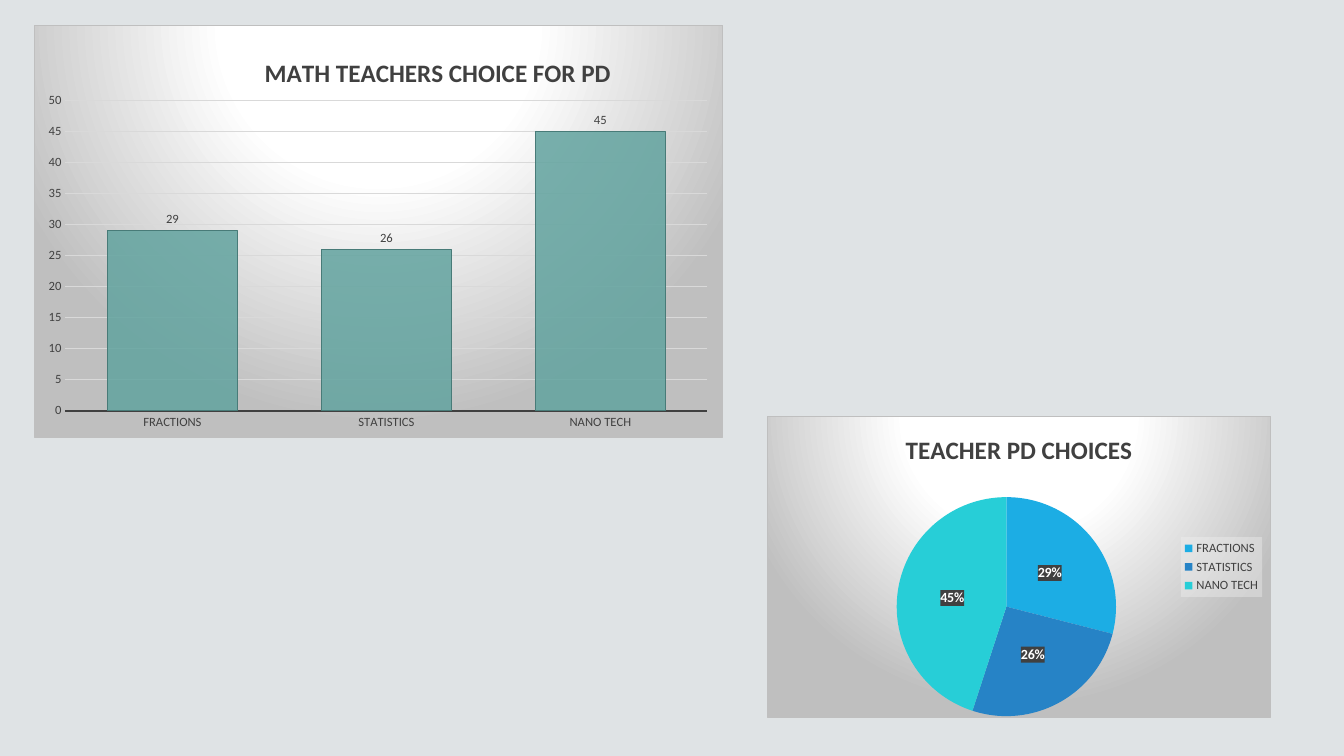
from lxml import etree
from pptx import Presentation
from pptx import util as u
from pptx.chart import data as chart_data
from pptx.dml import color
from pptx.enum import chart as kinds
from pptx.oxml import ns, parse_xml

CHOICES = ["FRACTIONS", "STATISTICS", "NANO TECH"]
VOTES = [29, 26, 45]
FONT = "Calibri"
COLORS = {
    "page": "DFE3E5", "ink": "404040", "white": "FFFFFF", "grid": "D9D9D9",
    "edge": "BFBFBF", "bar": "62A39F", "bar_edge": "487B78", "legend": "F2F2F2",
}
SLICES = ["1CADE4", "2683C6", "27CED7"]
COLUMNS = {
    "title": "MATH TEACHERS CHOICE FOR PD",
    "kind": kinds.XL_CHART_TYPE.COLUMN_CLUSTERED,
    "box": (34, 25, 689, 413),
    "plot": (31, 75, 643, 311),
    "title_at": (226, 25),
}
PIE = {
    "title": "TEACHER PD CHOICES",
    "kind": kinds.XL_CHART_TYPE.PIE,
    "box": (767, 416, 504, 302),
    "plot": (57, 81, 365, 220),
    "title_at": None,
}
PX = 914400 / 100.8


def px(length):
    return u.Emu(round(length * PX))


def rgb(name):
    return color.RGBColor.from_string(COLORS.get(name, name))


def set_font(font, size, name="ink", bold=False):
    font.name, font.size, font.bold = FONT, u.Pt(size), bold
    font.color.rgb = rgb(name)


def set_line(line, name, width):
    line.color.rgb = rgb(name)
    line.width = u.Pt(width)


def shape_props(fill, line=""):
    return parse_xml(f'<c:spPr {ns.nsdecls("c", "a")}>{fill}{line}</c:spPr>')


def see_through(name, percent):
    return (f'<a:solidFill><a:srgbClr val="{COLORS[name]}">'
            f'<a:alpha val="{percent * 1000}"/></a:srgbClr></a:solidFill>')


def set_layout(parent, box, values, inner=False):
    for old in parent.findall(ns.qn("c:layout")):
        parent.remove(old)
    layout = etree.Element(ns.qn("c:layout"))
    manual = etree.SubElement(layout, ns.qn("c:manualLayout"))
    parts = [("layoutTarget", "inner")] if inner else []
    parts += [("xMode", "edge"), ("yMode", "edge")]
    sizes = (box[2], box[3]) * 2
    parts += [(key, f"{value / size:.3f}")
              for key, value, size in zip("xywh", values, sizes)]
    for key, value in parts:
        etree.SubElement(manual, ns.qn("c:" + key)).set("val", value)
    parent.insert(0 if inner else 1, layout)


def style_frame(chart):
    space = chart._chartSpace
    for old in space.findall(ns.qn("c:roundedCorners")):
        space.remove(old)
    corners = etree.Element(ns.qn("c:roundedCorners"))
    corners.set("val", "0")
    date = space.find(ns.qn("c:date1904"))
    space.insert(0 if date is None else space.index(date) + 1, corners)
    stops = "".join(
        f'<a:gs pos="{at * 1000}"><a:srgbClr val="{COLORS[name]}"/></a:gs>'
        for at, name in [(0, "white"), (39, "white"), (100, "edge")])
    fill = (f'<a:gradFill><a:gsLst>{stops}</a:gsLst><a:path path="circle">'
            '<a:fillToRect l="50000" t="-80000" r="50000" b="180000"/>'
            '</a:path></a:gradFill>')
    line = ('<a:ln w="9525"><a:solidFill>'
            f'<a:srgbClr val="{COLORS["edge"]}"/></a:solidFill></a:ln>')
    space.find(ns.qn("c:chart")).addnext(shape_props(fill, line))


def add_vote_chart(page, content):
    votes = chart_data.CategoryChartData()
    votes.categories = CHOICES
    votes.add_series("Series 1", VOTES)
    box = content["box"]
    chart = page.shapes.add_chart(content["kind"], *map(px, box), votes).chart
    set_font(chart.font, 10)
    style_frame(chart)
    chart.has_title = True
    title = chart.chart_title
    span = title.text_frame.paragraphs[0].add_run()
    span.text = content["title"]
    set_font(span.font, 18, bold=True)
    if content["title_at"]:
        set_layout(title._element, box, content["title_at"])
    plot_area = chart._chartSpace.find(".//" + ns.qn("c:plotArea"))
    set_layout(plot_area, box, content["plot"], inner=True)
    chart.plots[0].has_data_labels = True
    return chart


def style_columns(chart):
    chart.has_legend = False
    plot = chart.plots[0]
    plot.gap_width = 65
    plot.vary_by_categories = False
    bars = plot.series[0]
    bars.format.fill.solid()
    bars.format.fill.fore_color.rgb = rgb("bar")
    tint = bars._element.find(".//" + ns.qn("a:srgbClr"))
    etree.SubElement(tint, ns.qn("a:alpha")).set("val", "85000")
    set_line(bars.format.line, "bar_edge", 0.75)
    labels = plot.data_labels
    labels.show_value = True
    labels.position = kinds.XL_LABEL_POSITION.OUTSIDE_END
    set_font(labels.font, 9)
    for axis in (chart.category_axis, chart.value_axis):
        axis.major_tick_mark = axis.minor_tick_mark = kinds.XL_TICK_MARK.NONE
        set_font(axis.tick_labels.font, 9)
    set_line(chart.category_axis.format.line, "ink", 1.5)
    scale = chart.value_axis
    scale.minimum_scale, scale.maximum_scale, scale.major_unit = 0, 50, 5
    scale.format.line.fill.background()
    set_line(scale.major_gridlines.format.line, "grid", 0.75)


def style_pie(chart):
    plot = chart.plots[0]
    plot.vary_by_categories = True
    for index, name in enumerate(SLICES):
        fill = plot.series[0].points[index].format.fill
        fill.solid()
        fill.fore_color.rgb = rgb(name)
    labels = plot.data_labels
    labels.show_value, labels.show_percentage = False, True
    labels.number_format, labels.number_format_is_linked = "0%", False
    labels.position = kinds.XL_LABEL_POSITION.CENTER
    set_font(labels.font, 10, "white", True)
    chart.has_legend = True
    legend = chart.legend
    legend.position = kinds.XL_LEGEND_POSITION.RIGHT
    legend.include_in_layout = False
    set_font(legend.font, 9)
    for part, name, percent in ((labels, "ink", 90), (legend, "legend", 39)):
        text = part._element.find(ns.qn("c:txPr"))
        text.addprevious(shape_props(see_through(name, percent)))


def main():
    deck = Presentation()
    deck.slide_width, deck.slide_height = px(1344), px(756)
    page = deck.slides.add_slide(deck.slide_layouts[6])
    page.background.fill.solid()
    page.background.fill.fore_color.rgb = rgb("page")
    style_columns(add_vote_chart(page, COLUMNS))
    style_pie(add_vote_chart(page, PIE))
    deck.save("out.pptx")


if __name__ == "__main__":
    main()
